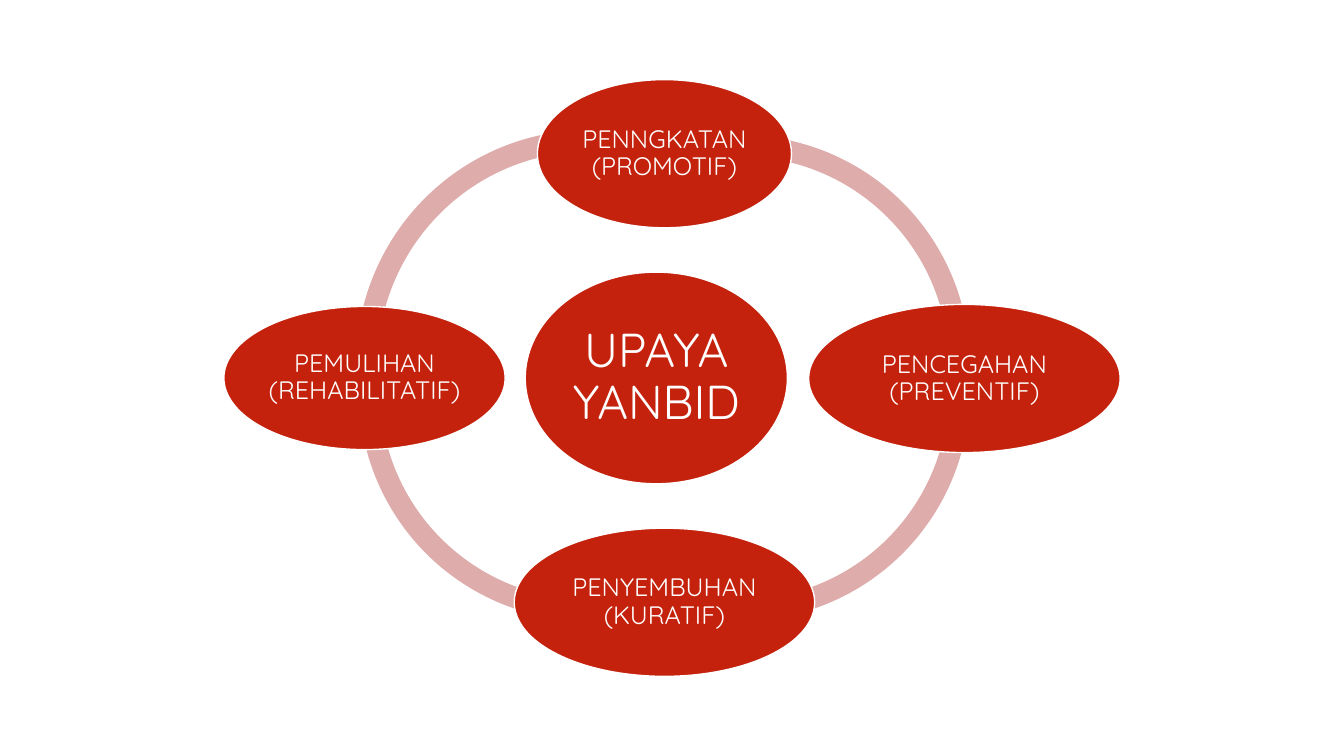
"""Build the slide showing the four efforts of midwifery care around a hub."""
from pptx import Presentation, util as u
from pptx.dml.color import RGBColor
from pptx.enum import shapes, text

PX = u.Inches(1) // 100
SLIDE = (1333, 750)
FONT = "Quicksand"
COLORS = {"ring": "DEACAB", "oval": "C4220D", "white": "FFFFFF"}
RING_THICKNESS = 0.046
ADJUST_PER_DEGREE = 0.6

# left, top, width, height, start angle, end angle
ARCS = [
    (353, 129, 463, 467, 176.63, 289.76),
    (356, 160, 456, 456, 70.24, 183.38),
    (506, 160, 456, 456, 356.63, 109.76),
    (506, 134, 456, 456, 250.24, 3.38),
]
# label, left, top, width, height, text size, inset
OVALS = [
    ("UPAYA YANBID", 521, 270, 260, 210, 34, 5),
    ("PENNGKATAN(PROMOTIF)", 533, 79, 252, 147, 18, 3),
    ("PENCEGAHAN (PREVENTIF)", 802, 302, 309, 147, 18, 3),
    ("PENYEMBUHAN (KURATIF)", 510, 524, 298, 147, 18, 3),
    ("PEMULIHAN (REHABILITATIF)", 222, 304, 279, 142, 18, 3),
]


def color(name):
    return RGBColor.from_string(COLORS[name])


def add_filled(page, kind, bounds, fill):
    shape = page.shapes.add_shape(kind, *(PX * side for side in bounds))
    shape.shadow.inherit = False
    shape.fill.solid()
    shape.fill.fore_color.rgb = color(fill)
    return shape


def add_arc(page, *bounds, start, end):
    arc = add_filled(page, shapes.MSO_SHAPE.BLOCK_ARC, bounds, "ring")
    arc.line.fill.background()
    arc.adjustments[0] = start * ADJUST_PER_DEGREE
    arc.adjustments[1] = end * ADJUST_PER_DEGREE
    arc.adjustments[2] = RING_THICKNESS


def add_oval(page, label, *bounds, size, inset):
    oval = add_filled(page, shapes.MSO_SHAPE.OVAL, bounds, "oval")
    oval.line.color.rgb = color("white")
    oval.line.width = u.Pt(1)
    frame = oval.text_frame
    frame.word_wrap = True
    frame.vertical_anchor = text.MSO_ANCHOR.MIDDLE
    frame.margin_left = frame.margin_right = PX * inset
    frame.margin_top = frame.margin_bottom = PX * inset
    para = frame.paragraphs[0]
    para.text = label
    para.alignment = text.PP_ALIGN.CENTER
    para.line_spacing = 0.9
    para.font.name = FONT
    para.font.size = u.Pt(size)
    para.font.color.rgb = color("white")


def main():
    deck = Presentation()
    deck.slide_width, deck.slide_height = (PX * side for side in SLIDE)
    page = deck.slides.add_slide(deck.slide_layouts[6])
    for *bounds, start, end in ARCS:
        add_arc(page, *bounds, start=start, end=end)
    for label, *bounds, size, inset in OVALS:
        add_oval(page, label, *bounds, size=size, inset=inset)
    deck.save("out.pptx")


if __name__ == "__main__":
    main()
